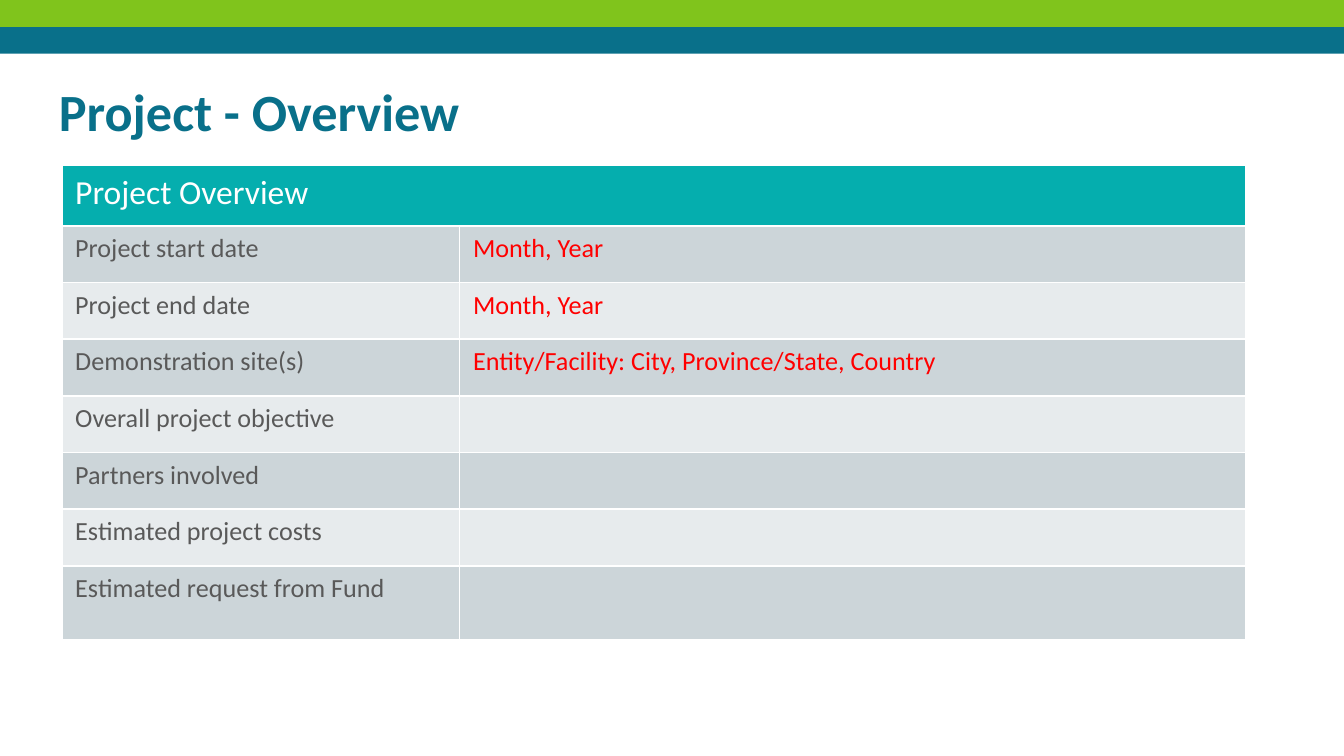
from lxml import etree
from pptx import Presentation
from pptx.dml.color import RGBColor
from pptx.enum.shapes import MSO_SHAPE
from pptx.enum.text import MSO_ANCHOR
from pptx.oxml.ns import qn
from pptx.util import Inches, Pt

RECTANGLE = MSO_SHAPE.RECTANGLE
TOP = MSO_ANCHOR.TOP

COLORS = {
    "blue": "09708A",
    "green": "80C41C",
    "teal": "05AEAE",
    "band_dark": "CCD5D9",
    "band_light": "E7EBED",
    "white": "FFFFFF",
    "label": "595959",
    "prompt": "FF0000",
}
COLUMN_WIDTHS = [2.96, 5.85]
TABLE_HEIGHT = 3.53
HEADING_HEIGHT = 0.45
LAST_HEIGHT = 0.55
ROWS = [
    ("Project start date", "Month, Year"),
    ("Project end date", "Month, Year"),
    ("Demonstration site(s)", "Entity/Facility: City, Province/State, Country"),
    ("Overall project objective", ""),
    ("Partners involved", ""),
    ("Estimated project costs", ""),
    ("Estimated request from Fund", ""),
]


def rgb(name):
    return RGBColor.from_string(COLORS[name])


def write(frame, text, size, color, bold=False):
    para = frame.paragraphs[0]
    para.font.size = Pt(size)
    if text:
        span = para.add_run()
        span.text = text
        span.font.name = "Calibri"
        span.font.size = Pt(size)
        span.font.bold = bold
        span.font.color.rgb = rgb(color)


def set_borders(cell, color):
    """Draw 1 pt borders on all sides; call before filling the cell."""
    properties = cell._tc.get_or_add_tcPr()
    for side in ("lnL", "lnR", "lnT", "lnB"):
        line = etree.SubElement(properties, qn(f"a:{side}"), w=str(Pt(1)))
        fill = etree.SubElement(line, qn("a:solidFill"))
        etree.SubElement(fill, qn("a:srgbClr"), val=COLORS[color])


class SlideBuilder:
    def __init__(self, page):
        self.page = page

    def bar(self, top, color):
        shape = self.page.shapes.add_shape(
            RECTANGLE, 0, Inches(top), Inches(10), Inches(0.2))
        shape.shadow.inherit = False
        shape.fill.solid()
        shape.fill.fore_color.rgb = rgb(color)
        shape.line.fill.background()

    def title(self, text):
        box = self.page.shapes.add_textbox(
            Inches(0.34), Inches(0.49), Inches(9.32), Inches(0.63))
        frame = box.text_frame
        frame.word_wrap = True
        frame.vertical_anchor = TOP
        frame.margin_left = frame.margin_right = Inches(0.1)
        frame.margin_top = frame.margin_bottom = Inches(0.1)
        write(frame, text, 28, "blue", bold=True)

    def cell(self, cell, text, size, color, fill):
        set_borders(cell, "white")
        cell.fill.solid()
        cell.fill.fore_color.rgb = rgb(fill)
        write(cell.text_frame, text, size, color)

    def table(self, heading, rows):
        table = self.page.shapes.add_table(
            len(rows) + 1, len(COLUMN_WIDTHS), Inches(0.46), Inches(1.23),
            Inches(sum(COLUMN_WIDTHS)), Inches(TABLE_HEIGHT)).table
        for column, width in zip(table.columns, COLUMN_WIDTHS):
            column.width = Inches(width)
        middle_count = len(rows) - 1
        middle_height = (TABLE_HEIGHT - HEADING_HEIGHT - LAST_HEIGHT) / middle_count
        heights = [HEADING_HEIGHT] + [middle_height] * middle_count + [LAST_HEIGHT]
        for row, height in zip(table.rows, heights):
            row.height = Inches(height)

        table.cell(0, 0).merge(table.cell(0, 1))
        for column, text in enumerate((heading, "")):
            self.cell(table.cell(0, column), text, 18, "white", "teal")
        for number, (label, value) in enumerate(rows, start=1):
            band = "band_dark" if number % 2 else "band_light"
            self.cell(table.cell(number, 0), label, 14, "label", band)
            self.cell(table.cell(number, 1), value, 14, "prompt", band)


def main():
    deck = Presentation()
    deck.slide_width = Inches(10)
    deck.slide_height = deck.slide_width * 9 // 16
    builder = SlideBuilder(deck.slides.add_slide(deck.slide_layouts[6]))
    builder.bar(0.2, "blue")
    builder.bar(0, "green")
    builder.title("Project - Overview")
    builder.table("Project Overview", ROWS)
    deck.save("out.pptx")


if __name__ == "__main__":
    main()
